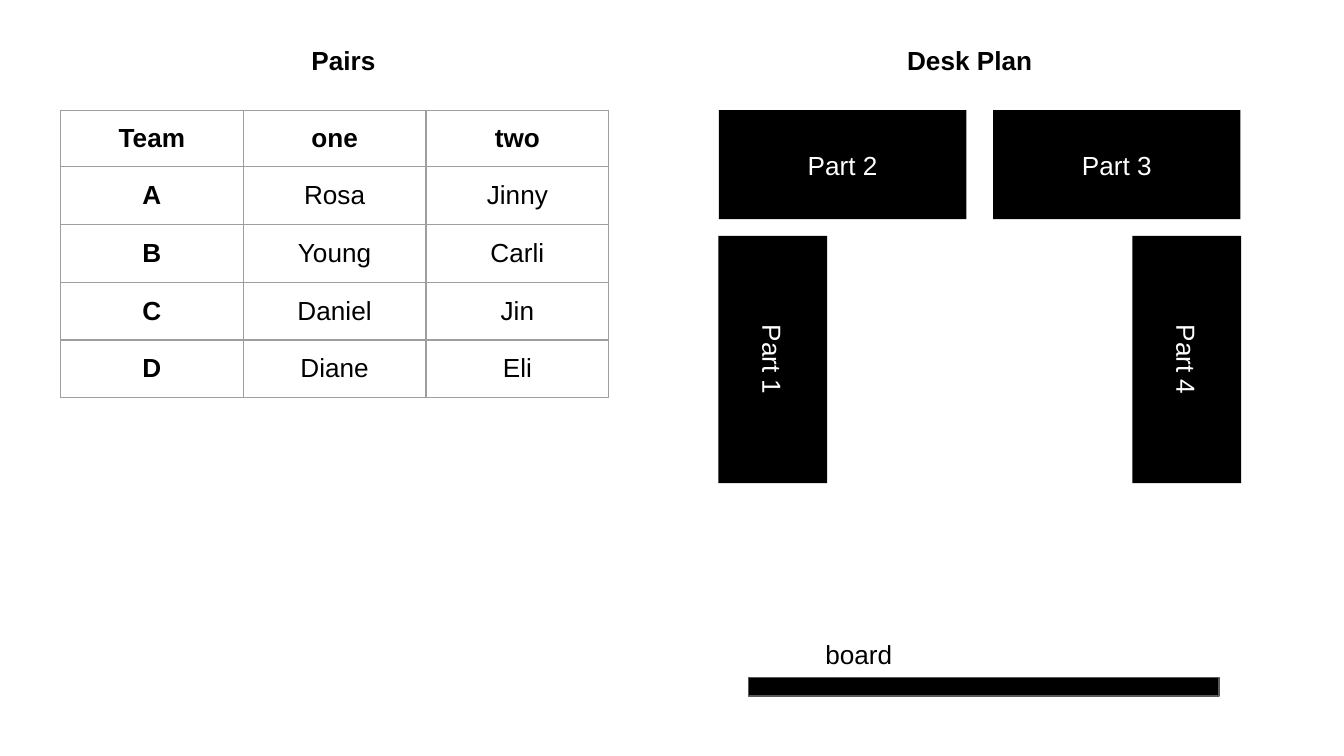
from pptx import Presentation
from pptx.dml.color import RGBColor
from pptx.enum.shapes import MSO_SHAPE
from pptx.enum.text import MSO_ANCHOR, PP_ALIGN
from pptx.oxml.ns import qn
from pptx.util import Inches, Pt
from lxml.etree import SubElement

COLORS = {"ink": "000000", "paper": "FFFFFF", "grid": "9E9E9E", "edge": "595959"}
FONT = "Arial"
MARGIN = 0.1
DESK_SIZE = (1.84, 0.81)
PAIRS = [
    ("Team", "one", "two"),
    ("A", "Rosa", "Jinny"),
    ("B", "Young", "Carli"),
    ("C", "Daniel", "Jin"),
    ("D", "Diane", "Eli"),
]
DESKS = [
    ("Part 2", 5.35, 0.82, 0),
    ("Part 3", 7.39, 0.82, 0),
    ("Part 1", 4.83, 2.27, 90),
    ("Part 4", 7.91, 2.27, 90),
]


def color(name):
    return RGBColor.from_string(COLORS[name])


def write(frame, text, ink="ink", bold=False):
    frame.text = text
    frame.word_wrap = True
    para = frame.paragraphs[0]
    para.alignment = PP_ALIGN.CENTER
    for span in para.runs:
        span.font.name = FONT
        span.font.size = Pt(14)
        span.font.bold = bold
        span.font.color.rgb = color(ink)


def set_layout(holder):
    holder.vertical_anchor = MSO_ANCHOR.MIDDLE
    holder.margin_left = holder.margin_right = Inches(MARGIN)
    holder.margin_top = holder.margin_bottom = Inches(MARGIN)


def add_cell_borders(cell):
    properties = cell._tc.get_or_add_tcPr()
    for position, side in enumerate(("a:lnL", "a:lnR", "a:lnT", "a:lnB")):
        line = properties.makeelement(qn(side), {"w": str(Pt(0.75))})
        properties.insert(position, line)
        fill = SubElement(line, qn("a:solidFill"))
        SubElement(fill, qn("a:srgbClr"), val=COLORS["grid"])


def add_pairs_table(page):
    area = [Inches(n) for n in (0.45, 0.82, 4.08, 2.17)]
    table = page.shapes.add_table(len(PAIRS), len(PAIRS[0]), *area).table
    for column in table.columns:
        column.width = Inches(1.36)
    for row_index, names in enumerate(PAIRS):
        table.rows[row_index].height = Inches(0.43 if row_index else 0.42)
        for column_index, name in enumerate(names):
            cell = table.cell(row_index, column_index)
            cell.fill.background()
            set_layout(cell)
            write(cell.text_frame, name, bold=row_index == 0 or column_index == 0)
            add_cell_borders(cell)


def add_block(page, left, top, width, height):
    block = page.shapes.add_shape(
        MSO_SHAPE.RECTANGLE, Inches(left), Inches(top), Inches(width), Inches(height)
    )
    block.shadow.inherit = False
    block.fill.solid()
    block.fill.fore_color.rgb = color("ink")
    block.line.fill.background()
    return block


def add_desk(page, text, left, top, rotation):
    desk = add_block(page, left, top, *DESK_SIZE)
    desk.rotation = rotation
    set_layout(desk.text_frame)
    write(desk.text_frame, text, ink="paper")


def add_board(page):
    board = add_block(page, 5.57, 5.04, 3.5, 0.14)
    board.line.color.rgb = color("edge")
    board.line.width = Pt(0.75)


def add_label(page, text, left, top, width, height, bold=False):
    box = page.shapes.add_textbox(
        Inches(left), Inches(top), Inches(width), Inches(height)
    )
    set_layout(box.text_frame)
    write(box.text_frame, text, bold=bold)


def main():
    deck = Presentation()
    deck.slide_width = Inches(10)
    deck.slide_height = deck.slide_width * 9 // 16
    page = deck.slides.add_slide(deck.slide_layouts[6])
    add_pairs_table(page)
    for desk in DESKS:
        add_desk(page, *desk)
    for title, left in (("Desk Plan", 6.37), ("Pairs", 1.71)):
        add_label(page, title, left, 0.21, 1.69, 0.48, bold=True)
    add_board(page)
    add_label(page, "board", 5.59, 4.64, 1.6, 0.46)
    deck.save("out.pptx")


if __name__ == "__main__":
    main()
